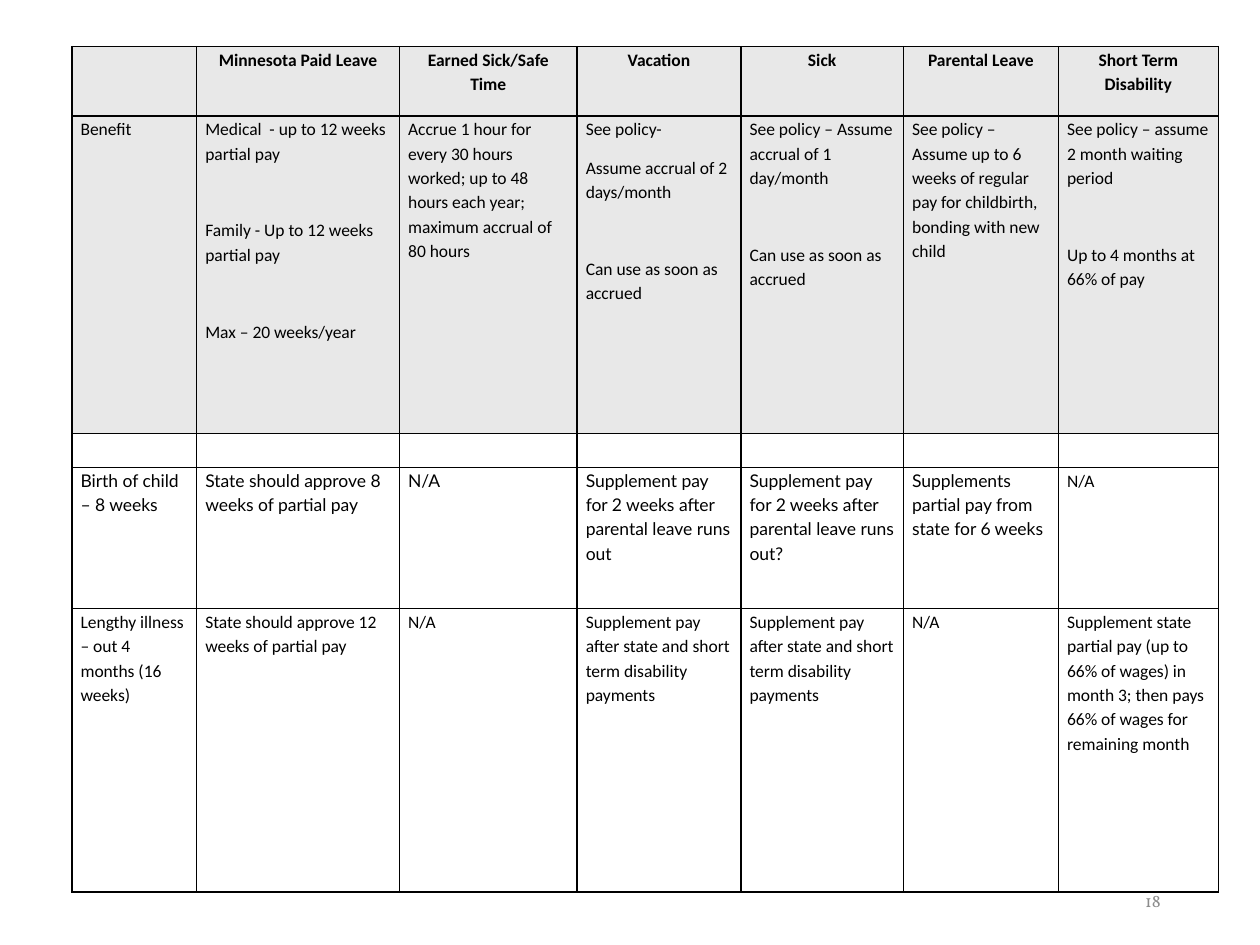
from lxml.etree import SubElement
from pptx import Presentation
from pptx.dml.color import RGBColor
from pptx.enum.text import MSO_ANCHOR, PP_ALIGN
from pptx.oxml import parse_xml
from pptx.oxml.ns import nsdecls, qn
from pptx.util import Inches, Pt

BLACK = RGBColor(0x00, 0x00, 0x00)
GRAY = RGBColor(0x8C, 0x8C, 0x8C)
SHADE = RGBColor(0xE8, 0xE8, 0xE8)

TEXT_SIZE = Pt(10)
SECTION_GAP = Pt(22)
COLUMN_WIDTHS = [0.99, 1.61, 1.41, 1.3, 1.29, 1.23, 1.27]
ROW_HEIGHTS = [0.55, 2.52, 0.27, 1.12, 2.25]
SHADED_ROWS = (0, 1)
BIRTH_ROW = 3
LAST_COLUMN = len(COLUMN_WIDTHS) - 1

# Each cell is a list of sections; a section is a list of paragraphs.
HEADINGS = ["", "Minnesota Paid Leave", "Earned Sick/Safe Time", "Vacation", "Sick",
            "Parental Leave", "Short Term Disability"]
BENEFITS = [
    [["Benefit"]],
    [["Medical  - up to 12 weeks partial pay"], ["Family - Up to 12 weeks partial pay"],
     ["Max – 20 weeks/year"]],
    [["Accrue 1 hour for every 30 hours worked; up to 48 hours each year; "
      "maximum accrual of 80 hours"]],
    [["See policy-", "Assume accrual of 2 days/month"], ["Can use as soon as accrued"]],
    [["See policy – Assume accrual of 1 day/month"], ["Can use as soon as accrued"]],
    [["See policy – Assume up to 6 weeks of regular pay for childbirth, "
      "bonding with new child"]],
    [["See policy – assume 2 month waiting period"], ["Up to 4 months at 66% of pay"]],
]
BIRTH = ["Birth of child  – 8 weeks", "State should approve 8 weeks of partial pay", "N/A",
         "Supplement pay for 2 weeks after parental leave runs out",
         "Supplement pay for 2 weeks after parental leave runs out?",
         "Supplements partial pay from state for 6 weeks", "N/A"]
ILLNESS_SUPPLEMENT = "Supplement pay after state and short term disability payments"
ILLNESS = ["Lengthy illness – out 4 months (16 weeks)",
           "State should approve 12 weeks of partial pay", "N/A",
           ILLNESS_SUPPLEMENT, ILLNESS_SUPPLEMENT, "N/A",
           "Supplement state partial pay (up to 66% of wages) in month 3; "
           "then pays 66% of wages for remaining month"]


def single_sections(texts):
    """Turn plain texts into cells of one section with one paragraph."""
    return [[[text]] if text else [] for text in texts]


def add_run(paragraph, text, font_name, color, bold=False):
    run = paragraph.add_run()
    run.text = text
    run.font.name = font_name
    run.font.size = TEXT_SIZE
    run.font.bold = bold
    run.font.color.rgb = color


def set_borders(cell):
    properties = cell._tc.get_or_add_tcPr()
    for index, side in enumerate(("lnL", "lnR", "lnT", "lnB")):
        properties.insert(index, parse_xml(
            f'<a:{side} {nsdecls("a")} w="{Pt(1)}"><a:solidFill>'
            f'<a:srgbClr val="{BLACK}"/></a:solidFill></a:{side}>'))


def format_cell(cell, shaded):
    cell.margin_left = cell.margin_right = Inches(0.07)
    cell.margin_top = cell.margin_bottom = 0
    if shaded:
        cell.fill.solid()
        cell.fill.fore_color.rgb = SHADE
    else:
        cell.fill.background()
    set_borders(cell)


def fill_cell(cell, sections, font_name, heading):
    frame = cell.text_frame
    if not sections:
        # A small end mark keeps an empty cell from stretching its row.
        SubElement(frame.paragraphs[0]._p, qn("a:endParaRPr"), sz="1000")
    first = True
    for section in sections:
        for position, text in enumerate(section):
            paragraph = frame.paragraphs[0] if first else frame.add_paragraph()
            paragraph.alignment = PP_ALIGN.CENTER if heading else PP_ALIGN.LEFT
            paragraph.line_spacing = 1.15
            paragraph.space_after = Pt(8)
            if position == 0 and not first:
                paragraph.space_before = SECTION_GAP
            add_run(paragraph, text, font_name, BLACK, heading)
            first = False


def add_leave_table(slide):
    rows = [single_sections(HEADINGS), BENEFITS, [[]] * len(COLUMN_WIDTHS),
            single_sections(BIRTH), single_sections(ILLNESS)]
    table = slide.shapes.add_table(
        len(rows), len(COLUMN_WIDTHS), Inches(0.57), Inches(0.37),
        Inches(sum(COLUMN_WIDTHS)), Inches(sum(ROW_HEIGHTS))).table
    table.first_row = table.horz_banding = False
    for column, width in zip(table.columns, COLUMN_WIDTHS):
        column.width = Inches(width)
    for row, height in zip(table.rows, ROW_HEIGHTS):
        row.height = Inches(height)
    for row_index, row in enumerate(rows):
        for column_index, sections in enumerate(row):
            cell = table.cell(row_index, column_index)
            in_lato = row_index == BIRTH_ROW and column_index != LAST_COLUMN
            format_cell(cell, row_index in SHADED_ROWS)
            fill_cell(cell, sections, "Lato" if in_lato else "Calibri", row_index == 0)


def add_page_number(slide, number):
    box = slide.shapes.add_textbox(Inches(7.06), Inches(6.95), Inches(2.25), Inches(0.4))
    frame = box.text_frame
    frame.word_wrap = True
    frame.vertical_anchor = MSO_ANCHOR.MIDDLE
    paragraph = frame.paragraphs[0]
    paragraph.alignment = PP_ALIGN.RIGHT
    add_run(paragraph, number, "Vollkorn", GRAY)


def main():
    presentation = Presentation()
    presentation.slide_width = Inches(10)
    presentation.slide_height = Inches(7.5)
    slide = presentation.slides.add_slide(presentation.slide_layouts[6])
    add_page_number(slide, "18")
    add_leave_table(slide)
    presentation.save("out.pptx")


if __name__ == "__main__":
    main()
